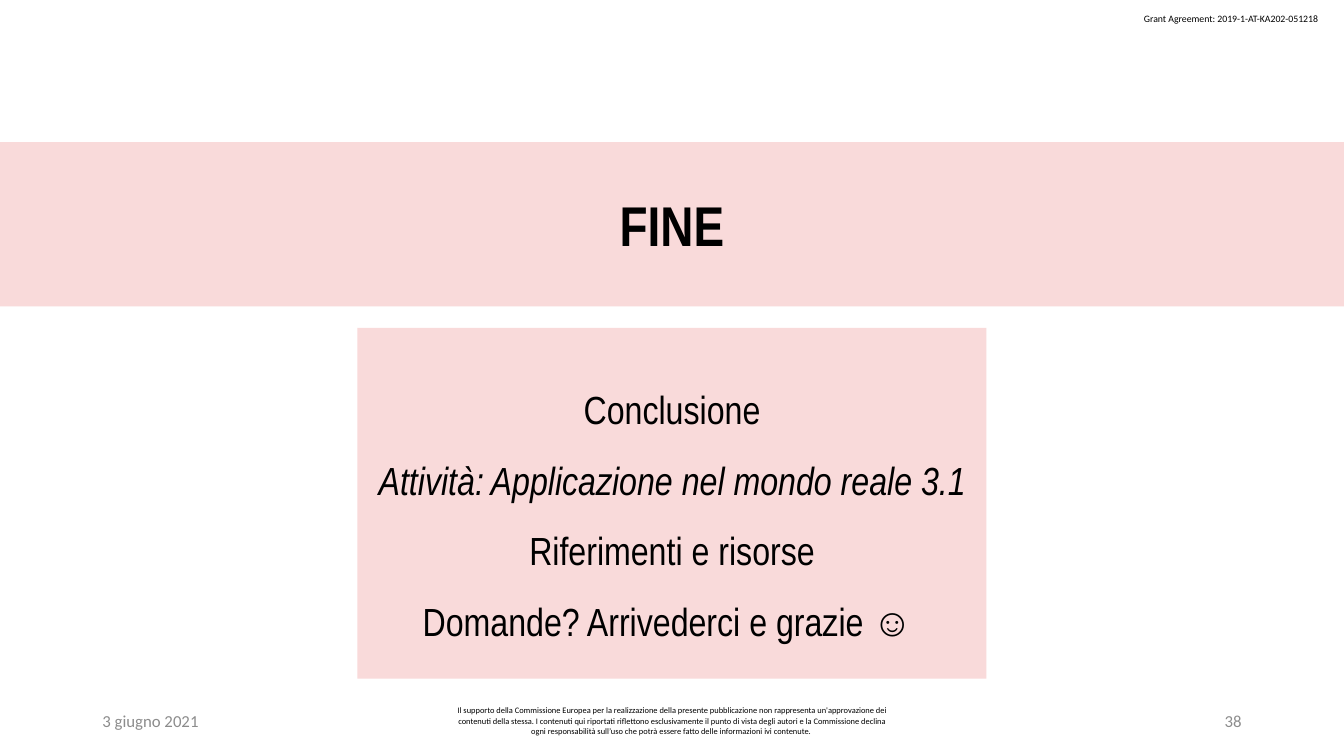
from dataclasses import dataclass

from pptx import Presentation
from pptx.dml.color import RGBColor
from pptx.enum.shapes import MSO_SHAPE
from pptx.enum.text import MSO_ANCHOR, MSO_AUTO_SIZE, PP_ALIGN
from pptx.util import Cm, Pt


@dataclass(frozen=True)
class Theme:
    pink: RGBColor = RGBColor(0xF9, 0xDA, 0xDA)
    black: RGBColor = RGBColor(0, 0, 0)
    gray: RGBColor = RGBColor(0x8C, 0x8C, 0x8C)
    head: str = "Arial Narrow"
    base: str = "Calibri"
    title: int = 40
    body: int = 28
    foot: int = 12
    grant: int = 7
    note: int = 6


THEME = Theme()
WIDE, HIGH = 33.87, 19.05

GRANT = "Grant Agreement: 2019-1-AT-KA202-051218"
DATE = "3 giugno 2021"
NOTE = (
    "Il supporto della Commissione Europea per la realizzazione della presente "
    "pubblicazione non rappresenta un'approvazione dei contenuti della stessa. "
    "I contenuti qui riportati riflettono esclusivamente il punto di vista degli "
    "autori e la Commissione declina ogni responsabilità sull’uso che potrà "
    "essere fatto delle informazioni ivi contenute. "
)
PAGE = "38"
TITLE = "FINE"
LINES = [
    ("Conclusione", False),
    ("Attività: Applicazione nel mondo reale 3.1", True),
    ("Riferimenti e risorse", False),
    ("Domande? Arrivederci e grazie ☺ ", False),
]


def apply(item, form):
    for key, value in form.items():
        setattr(item, key, value)


def write(shape, lines, font, align, space=1.0, frame=None):
    """Fill a shape with (text, italic) lines in one style."""
    text = shape.text_frame
    apply(text, {"word_wrap": True, "auto_size": MSO_AUTO_SIZE.NONE,
                 "vertical_anchor": MSO_ANCHOR.MIDDLE, **(frame or {})})
    for spot, (words, slant) in enumerate(lines):
        para = text.paragraphs[0] if spot == 0 else text.add_paragraph()
        apply(para, {"alignment": align, "line_spacing": space,
                     "space_before": Pt(0), "space_after": Pt(0)})
        run = para.add_run()
        run.text = words
        size, color = font["size"], font["color"]
        apply(run.font, {"name": font["name"], "size": Pt(size), "italic": slant,
                         "bold": font.get("bold", False)})
        run.font.color.rgb = color


def paint(shape):
    """Give a shape the plain pink fill and the wide insets."""
    shape.fill.solid()
    shape.fill.fore_color.rgb = THEME.pink
    shape.line.fill.background()
    apply(shape.text_frame, {"margin_left": Cm(0.33), "margin_right": Cm(0.33),
                             "margin_top": Cm(0.18), "margin_bottom": Cm(0.18)})


def draw_grant(slide, box):
    shape = slide.shapes.add_textbox(*map(Cm, box))
    font = {"name": THEME.base, "size": THEME.grant, "color": THEME.black}
    write(shape, [(GRANT, False)], font, PP_ALIGN.LEFT,
          frame={"word_wrap": False, "auto_size": MSO_AUTO_SIZE.SHAPE_TO_FIT_TEXT,
                 "vertical_anchor": MSO_ANCHOR.TOP})


def draw_foot(slide, box):
    """Date at the left, note in the middle, page number at the right."""
    left, top, width, height = box
    side, mid = 7.62, 11.43
    parts = [
        (DATE, left, side, THEME.foot, THEME.gray, PP_ALIGN.LEFT),
        (NOTE, left + (width - mid) / 2, mid, THEME.note, THEME.black, PP_ALIGN.CENTER),
        (PAGE, left + width - side, side, THEME.foot, THEME.gray, PP_ALIGN.RIGHT),
    ]
    for words, start, span, size, color, align in parts:
        shape = slide.shapes.add_textbox(Cm(start), Cm(top), Cm(span), Cm(height))
        font = {"name": THEME.base, "size": size, "color": color}
        write(shape, [(words, False)], font, align)


def draw_title(slide, box):
    shape = slide.shapes.title
    apply(shape, dict(zip(("left", "top", "width", "height"), map(Cm, box))))
    paint(shape)
    font = {"name": THEME.head, "size": THEME.title, "color": THEME.black, "bold": True}
    write(shape, [(TITLE, False)], font, PP_ALIGN.CENTER)


def draw_panel(slide, box):
    shape = slide.shapes.add_shape(MSO_SHAPE.RECTANGLE, *map(Cm, box))
    shape.shadow.inherit = False
    paint(shape)
    font = {"name": THEME.head, "size": THEME.body, "color": THEME.black}
    write(shape, LINES, font, PP_ALIGN.CENTER, space=1.5)


def main():
    deck = Presentation()
    apply(deck, {"slide_width": Cm(WIDE), "slide_height": Cm(HIGH)})
    slide = deck.slides.add_slide(deck.slide_layouts[5])

    # Header and footer
    edge = 2.33
    draw_grant(slide, (28.58, 0.2, 5, 0.56))
    draw_foot(slide, (edge, 17.65, WIDE - 2 * edge, 1.02))

    # Title band and closing panel
    span = 15.85
    draw_title(slide, (0, 3.58, WIDE, 4.14))
    draw_panel(slide, ((WIDE - span) / 2, 8.26, span, 8.84))

    deck.save("out.pptx")


if __name__ == "__main__":
    main()
